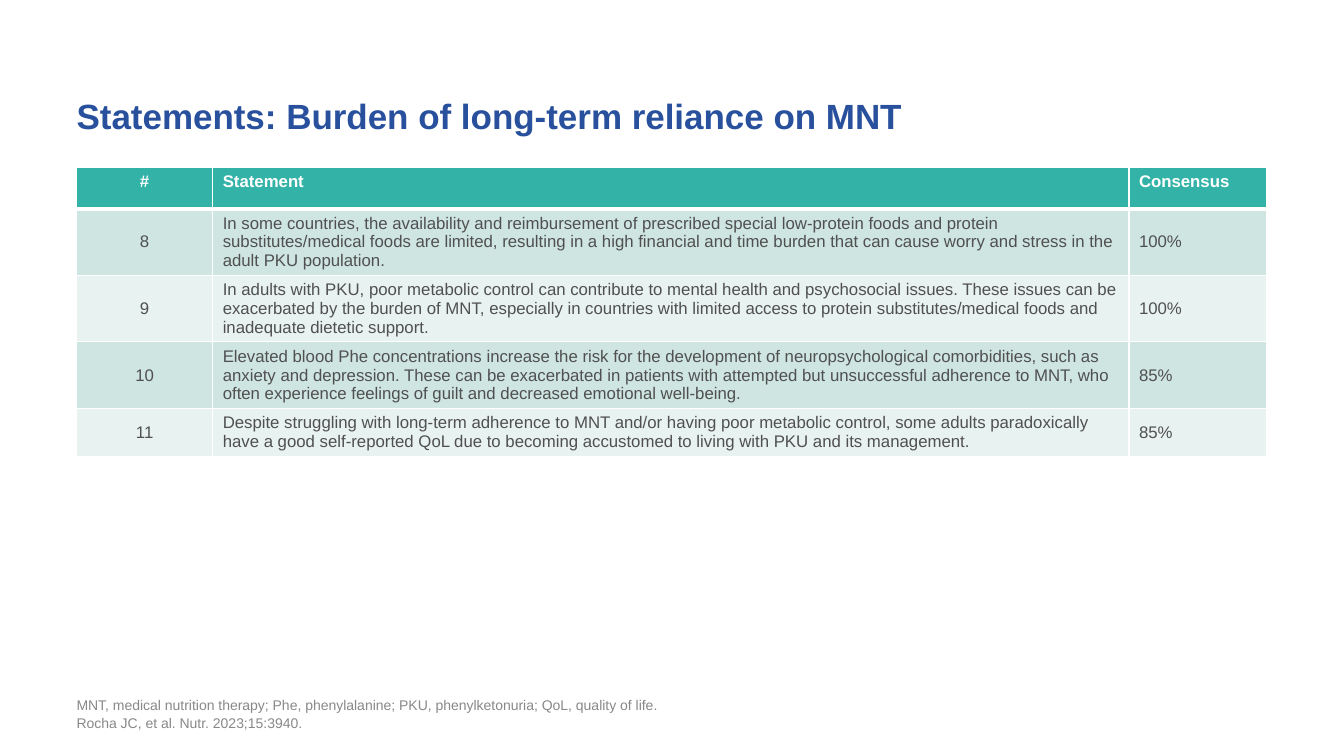
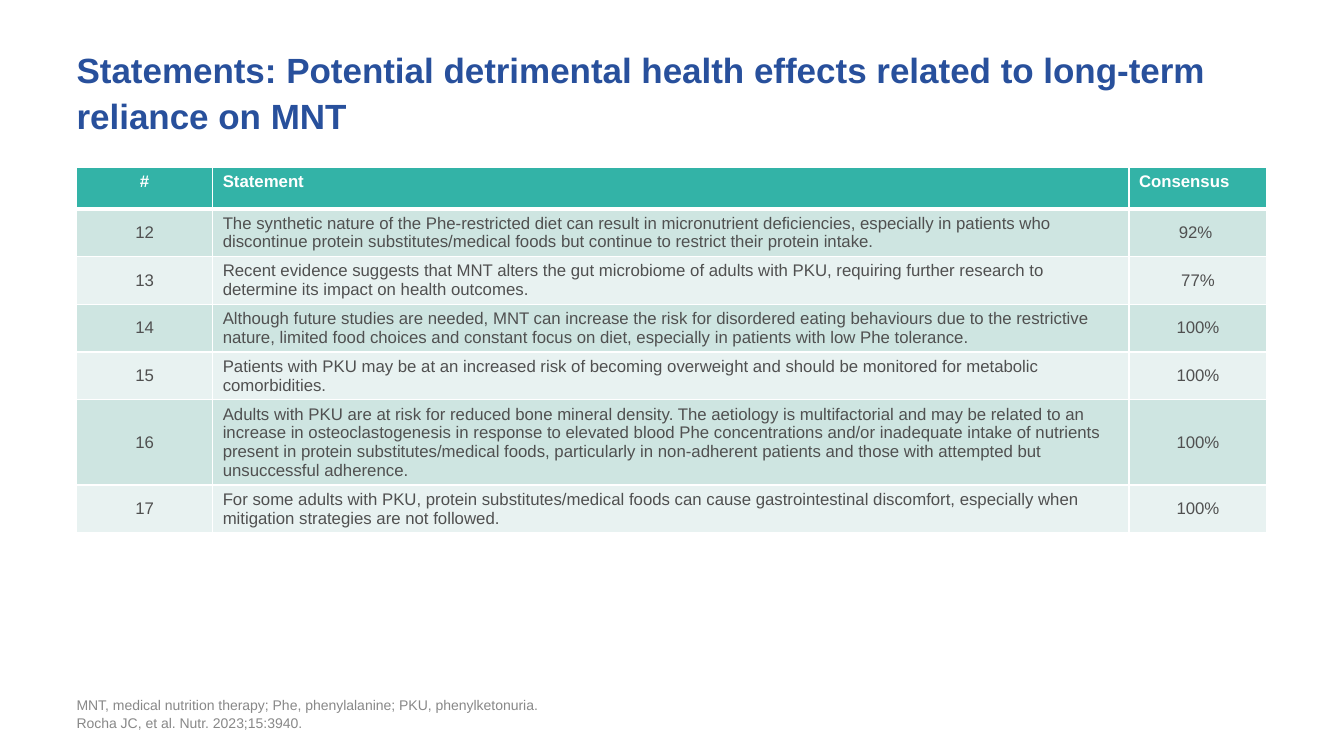
from dataclasses import dataclass

from lxml import etree
from pptx import Presentation
from pptx.dml.color import RGBColor
from pptx.enum import text
from pptx.oxml import ns
from pptx.util import Cm, Pt


@dataclass(frozen=True)
class Theme:
    font: str = "Arial"
    title: str = "28509C"
    header: str = "33B3A7"
    bands: tuple = ("CEE5E1", "E8F2F1")
    white: str = "FFFFFF"
    body: str = "505050"
    footer: str = "888888"
    title_size: int = 25
    table_size: int = 12
    footer_size: int = 10


theme = Theme()
LEFT, CENTER = text.PP_ALIGN.LEFT, text.PP_ALIGN.CENTER
TOP, MIDDLE, BOTTOM = text.MSO_ANCHOR.TOP, text.MSO_ANCHOR.MIDDLE, text.MSO_ANCHOR.BOTTOM
MARGIN, WIDTH = Cm(1.93), Cm(30)
COLUMNS = (Cm(3.43), Cm(23.09), Cm(3.48))
ROW_HEIGHT = Cm(1.04)
HEADINGS = ("#", "Statement", "Consensus")
CITATION = "Rocha JC, et al. Nutr. 2023;15:3940."

SLIDES = [
    {
        "title": "Statements: Burden of long-term reliance on MNT",
        "abbreviations": "MNT, medical nutrition therapy; Phe, phenylalanine; PKU, phenylketonuria; QoL, quality of life.",
        "consensus_align": LEFT,
        "rows": [
            ("8", "In some countries, the availability and reimbursement of prescribed special low-protein foods and protein substitutes/medical foods are limited, resulting in a high financial and time burden that can cause worry and stress in the adult PKU population.", "100%"),
            ("9", "In adults with PKU, poor metabolic control can contribute to mental health and psychosocial issues. These issues can be exacerbated by the burden of MNT, especially in countries with limited access to protein substitutes/medical foods and\ninadequate dietetic support.", "100%"),
            ("10", "Elevated blood Phe concentrations increase the risk for the development of neuropsychological comorbidities, such as anxiety and depression. These can be exacerbated in patients with attempted but unsuccessful adherence to MNT, who often experience feelings of guilt and decreased emotional well-being.", "85%"),
            ("11", "Despite struggling with long-term adherence to MNT and/or having poor metabolic control, some adults paradoxically have a good self-reported QoL due to becoming accustomed to living with PKU and its management.", "85%"),
        ],
    },
    {
        "title": "Statements: Potential detrimental health effects related to long-term reliance on MNT",
        "abbreviations": "MNT, medical nutrition therapy; Phe, phenylalanine; PKU, phenylketonuria.",
        "consensus_align": CENTER,
        "rows": [
            ("12", "The synthetic nature of the Phe-restricted diet can result in micronutrient deficiencies, especially in patients who discontinue protein substitutes/medical foods but continue to restrict their protein intake.", "92% "),
            ("13", "Recent evidence suggests that MNT alters the gut microbiome of adults with PKU, requiring further research to determine its impact on health outcomes.", "77%"),
            ("14", "Although future studies are needed, MNT can increase the risk for disordered eating behaviours due to the restrictive nature, limited food choices and constant focus on diet, especially in patients with low Phe tolerance.", "100%"),
            ("15", "Patients with PKU may be at an increased risk of becoming overweight and should be monitored for metabolic comorbidities.", "100%"),
            ("16", "Adults with PKU are at risk for reduced bone mineral density. The aetiology is multifactorial and may be related to an increase in osteoclastogenesis in response to elevated blood Phe concentrations and/or inadequate intake of nutrients present in protein substitutes/medical foods, particularly in non-adherent patients and those with attempted but unsuccessful adherence.", "100%"),
            ("17", "For some adults with PKU, protein substitutes/medical foods can cause gastrointestinal discomfort, especially when mitigation strategies are not followed.", "100%"),
        ],
    },
]


def write(tf, content, size, color, bold=False, align=LEFT, spacing=1.0):
    for i, line in enumerate(content.split("\n")):
        p = tf.add_paragraph() if i else tf.paragraphs[0]
        p.alignment = align
        p.line_spacing = spacing
        p.space_before = Pt(0)
        r = p.add_run()
        r.text = line
        r.font.name = theme.font
        r.font.size = Pt(size)
        r.font.bold = bold
        r.font.color.rgb = RGBColor.from_string(color)


def add_borders(cell, widths):
    tcPr = cell._tc.get_or_add_tcPr()
    for side, width in widths.items():
        ln = etree.SubElement(tcPr, ns.qn(f"a:ln{side}"), w=str(Pt(width)))
        fill = etree.SubElement(ln, ns.qn("a:solidFill"))
        etree.SubElement(fill, ns.qn("a:srgbClr"), val=theme.white)


prs = Presentation()
prs.slide_width, prs.slide_height = Cm(33.87), Cm(19.05)

for content in SLIDES:
    s = prs.slides.add_slide(prs.slide_layouts[5])
    title = s.shapes.title
    title.left, title.top, title.width, title.height = MARGIN, Cm(0.99), WIDTH, Cm(2.46)
    footer = s.shapes.add_textbox(MARGIN, Cm(17.42), Cm(26.75), Cm(1.02))
    for sp in (title, footer):
        tf = sp.text_frame
        tf.word_wrap = True
        tf.auto_size = text.MSO_AUTO_SIZE.NONE
        tf.vertical_anchor = BOTTOM
        tf.margin_left = tf.margin_top = tf.margin_right = tf.margin_bottom = 0
    write(title.text_frame, content["title"], theme.title_size, theme.title, bold=True, spacing=1.1)
    write(footer.text_frame, f"{content['abbreviations']}\n{CITATION}",
          theme.footer_size, theme.footer, spacing=1.1)

    rows = [HEADINGS, *content["rows"]]
    table = s.shapes.add_table(len(rows), len(COLUMNS), MARGIN, Cm(4.22),
                               WIDTH, ROW_HEIGHT * len(rows)).table
    for column, width in zip(table.columns, COLUMNS):
        column.width = width
    for i, values in enumerate(rows):
        table.rows[i].height = ROW_HEIGHT
        is_header = i == 0
        aligns = (CENTER, LEFT, LEFT if is_header else content["consensus_align"])
        borders = {"L": 1, "R": 1, "T": 3 if i == 1 else 1, "B": 3 if is_header else 1}
        for j, value in enumerate(values):
            cell = table.cell(i, j)
            add_borders(cell, borders)
            cell.fill.solid()
            cell.fill.fore_color.rgb = RGBColor.from_string(
                theme.header if is_header else theme.bands[(i - 1) % 2])
            cell.vertical_anchor = TOP if is_header else MIDDLE
            write(cell.text_frame, value, theme.table_size,
                  theme.white if is_header else theme.body, bold=is_header, align=aligns[j])

prs.save("out.pptx")
